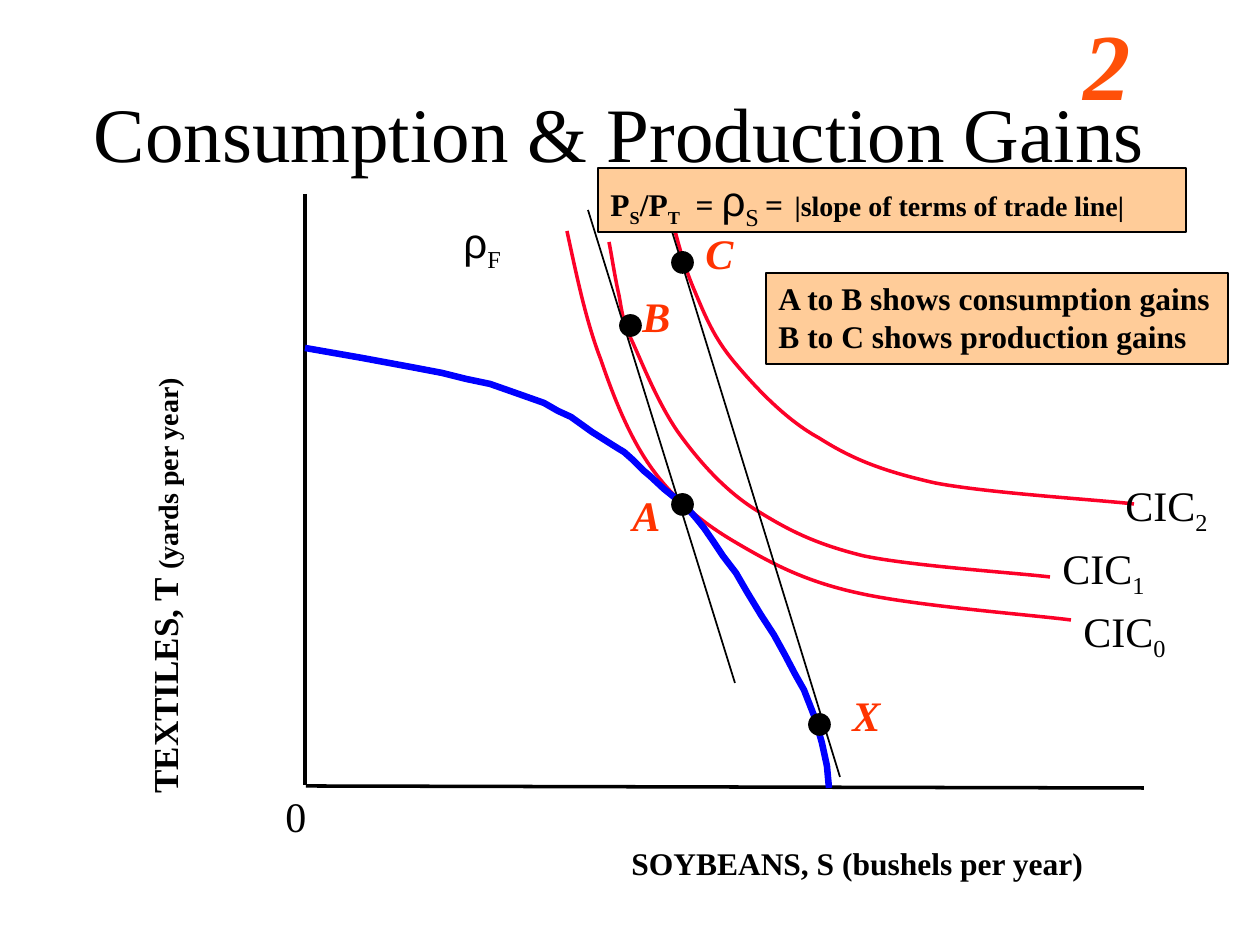
from dataclasses import dataclass

from lxml import etree
from pptx import Presentation
from pptx.dml.color import RGBColor
from pptx.enum.shapes import MSO_CONNECTOR, MSO_SHAPE
from pptx.enum.text import MSO_ANCHOR, MSO_AUTO_SIZE, PP_ALIGN
from pptx.oxml.ns import qn
from pptx.util import Pt

STRAIGHT = MSO_CONNECTOR.STRAIGHT
RECT, OVAL = MSO_SHAPE.RECTANGLE, MSO_SHAPE.OVAL
MIDDLE, CENTER, LEFT = MSO_ANCHOR.MIDDLE, PP_ALIGN.CENTER, PP_ALIGN.LEFT
EMU_PER_PX = 914400 / 126


def px(*values):
    return [round(v * EMU_PER_PX) for v in values]


@dataclass(frozen=True)
class Theme:
    serif: str = "Times New Roman"
    sans: str = "Arial"
    ink: str = "000000"
    number: str = "FF5008"
    point: str = "FF3300"
    curve: str = "FC0128"
    frontier: str = "0000FF"
    box: str = "FFCC99"
    huge: int = 54
    title: int = 44
    label: int = 24
    axis: int = 20
    body: int = 18
    small: int = 16
    thin: float = 1
    medium: float = 2
    thick: float = 3.75


T = Theme()


def add_run(p, text, size=T.label, color=T.ink, font=T.serif,
            bold=False, italic=False, sub=False):
    r = p.add_run()
    r.text = text
    f = r.font
    f.size, f.name, f.bold, f.italic = Pt(size), font, bold, italic
    f.color.rgb = RGBColor.from_string(color)
    if sub:
        r._r.get_or_add_rPr().set("baseline", "-25000")


class Diagram:
    def __init__(self, theme, slide):
        self.theme, self.s = theme, slide

    def fill_text(self, tf, paragraphs, align=LEFT):
        for i, runs in enumerate(paragraphs):
            p = tf.add_paragraph() if i else tf.paragraphs[0]
            p.alignment = align
            for text, style in runs:
                add_run(p, text, **style)

    def stroke(self, sp, color, width):
        sp.line.color.rgb = RGBColor.from_string(color)
        sp.line.width = Pt(width)

    def title(self, box, text):
        sp = self.s.shapes.title
        sp.left, sp.top, sp.width, sp.height = px(*box)
        tf = sp.text_frame
        tf.auto_size, tf.vertical_anchor = MSO_AUTO_SIZE.NONE, MIDDLE
        self.fill_text(tf, [[(text, {"size": self.theme.title})]], CENTER)

    def text(self, box, *runs, wrap=False, rotation=0):
        sp = self.s.shapes.add_textbox(*px(*box))
        sp.rotation = rotation
        tf = sp.text_frame
        tf.word_wrap, tf.auto_size = wrap, MSO_AUTO_SIZE.SHAPE_TO_FIT_TEXT
        self.fill_text(tf, [runs])

    def shape(self, kind, box, fill):
        sp = self.s.shapes.add_shape(kind, *px(*box))
        sp.shadow.inherit = False
        sp.fill.solid()
        sp.fill.fore_color.rgb = RGBColor.from_string(fill)
        self.stroke(sp, self.theme.ink, self.theme.thin)
        return sp

    def note(self, box, *paragraphs):
        tf = self.shape(RECT, box, self.theme.box).text_frame
        tf.word_wrap, tf.auto_size = True, MSO_AUTO_SIZE.SHAPE_TO_FIT_TEXT
        tf.vertical_anchor = MSO_ANCHOR.TOP
        self.fill_text(tf, paragraphs)

    def line(self, ends, width):
        sp = self.s.shapes.add_connector(STRAIGHT, *px(*ends))
        self.stroke(sp, self.theme.ink, width)
        etree.SubElement(sp._element.spPr, qn("a:effectLst"))

    def polyline(self, points, color, width):
        fb = self.s.shapes.build_freeform(*points[0], scale=EMU_PER_PX)
        fb.add_line_segments(points[1:], close=False)
        sp = fb.convert_to_shape()
        sp.shadow.inherit = False
        sp.fill.background()
        self.stroke(sp, color, width)
        return sp

    def curve(self, points, color, width):
        """Every three points after the first make one cubic segment."""
        sp = self.polyline(points, color, width)
        path = next(sp._element.iter(qn("a:path")))
        segments = path.findall(qn("a:lnTo"))
        for i in range(0, len(segments), 3):
            bezier = etree.SubElement(path, qn("a:cubicBezTo"))
            for segment in segments[i:i + 3]:
                bezier.append(segment[0])
                path.remove(segment)


INDIFFERENCE_CURVES = [
    [(567, 231), (577, 277), (586, 321), (601, 360), (615, 401), (631, 440),
     (653, 470), (675, 500), (701, 522), (735, 542), (769, 562), (803, 581),
     (858, 593), (915, 606), (1033, 615), (1071, 620)],
    [(609, 242), (611, 251), (615, 278), (619, 295), (622, 311), (622, 320),
     (633, 343), (643, 365), (658, 403), (678, 432), (698, 460), (724, 490),
     (756, 510), (788, 530), (815, 544), (864, 556), (912, 566), (1017, 573),
     (1050, 577)],
    [(662, 179), (672, 218), (680, 256), (693, 287), (706, 318), (714, 338),
     (735, 363), (756, 388), (786, 420), (819, 438), (852, 459), (882, 471),
     (935, 483), (987, 493), (1099, 500), (1134, 504)],
]
CURVE_LABELS = [(1071, 599), (1050, 536), (1113, 473)]
FRONTIER = [
    (305, 348), (362, 358), (416, 368), (442, 373), (466, 379), (490, 384),
    (510, 391), (527, 397), (544, 403), (558, 411), (571, 417), (592, 432),
    (611, 444), (619, 449), (624, 452), (633, 460), (640, 467), (644, 471),
    (650, 476), (664, 489), (679, 501), (688, 509), (696, 518), (704, 528),
    (713, 541), (723, 556), (736, 573), (747, 592), (761, 615), (774, 635),
    (785, 655), (795, 674), (804, 690), (815, 718), (822, 743), (827, 766),
    (829, 788)]
AXES = [(305, 194, 305, 785), (306, 786, 1144, 788)]
TRADE_LINES = [(735, 683, 588, 210), (840, 777, 662, 199)]
# Name: dot corner, label corner
POINTS = {"A": ((672, 494), (620, 483)), "B": ((620, 315), (630, 284)),
          "C": ((672, 252), (693, 221)), "X": ((809, 714), (840, 683))}
DOT = (21, 21)


def main():
    prs = Presentation()
    prs.slide_width, prs.slide_height = px(1260, 945)
    d = Diagram(T, prs.slides.add_slide(prs.slide_layouts[5]))
    bold = {"size": T.body, "bold": True}
    bold_sub = {**bold, "sub": True}
    small = {"size": T.small, "bold": True}
    accent = {"bold": True, "italic": True}
    rho = ("ρ", {"font": T.sans})

    # Title and number
    d.title((42, 53, 1155, 158), "Consumption & Production Gains")
    d.text((1071, 0, 179, 126),
           ("2", {"size": T.huge, "color": T.number, **accent}), wrap=True)

    # Axes and their labels
    for ends in AXES:
        d.line(ends, T.medium)
    d.text((619, 838, 478, 50), ("SOYBEANS, S (bushels per year)", bold))
    d.text((-58, 557, 444, 54),
           ("TEXTILES, T ", {"size": T.axis, "bold": True}),
           ("(yards per year)", small), rotation=270)
    d.text((273, 784, 47, 63), ("0", {}))

    # Indifference curves, trade lines and production frontier
    for i, (points, corner) in enumerate(zip(INDIFFERENCE_CURVES, CURVE_LABELS)):
        d.curve(points, T.curve, T.medium)
        d.text((*corner, 110, 63), ("CIC", {}), (str(i), {"sub": True}))
    for ends in TRADE_LINES:
        d.line(ends, T.thin)
    d.polyline(FRONTIER, T.frontier, T.thick)
    d.text((451, 210, 64, 63), rho, ("F", {"sub": True}))

    # Marked points
    for name, (dot, corner) in POINTS.items():
        d.shape(OVAL, (*dot, *DOT), T.ink)
        d.text((*corner, 53, 63), (name, {"color": T.point, **accent}))

    # Notes
    d.note((598, 168, 588, 64),
           [("P", bold), ("S", bold_sub), ("/P", bold), ("T", bold_sub),
            ("  = ", bold), rho, ("S ", {"sub": True}), ("=", bold),
            (" ", {"font": T.sans}),
            ("|slope of terms of trade line|", small)])
    d.note((766, 273, 462, 91),
           [("A to B shows consumption gains", bold)],
           [("B to C shows production gains", bold)])

    prs.save("out.pptx")


if __name__ == "__main__":
    main()
